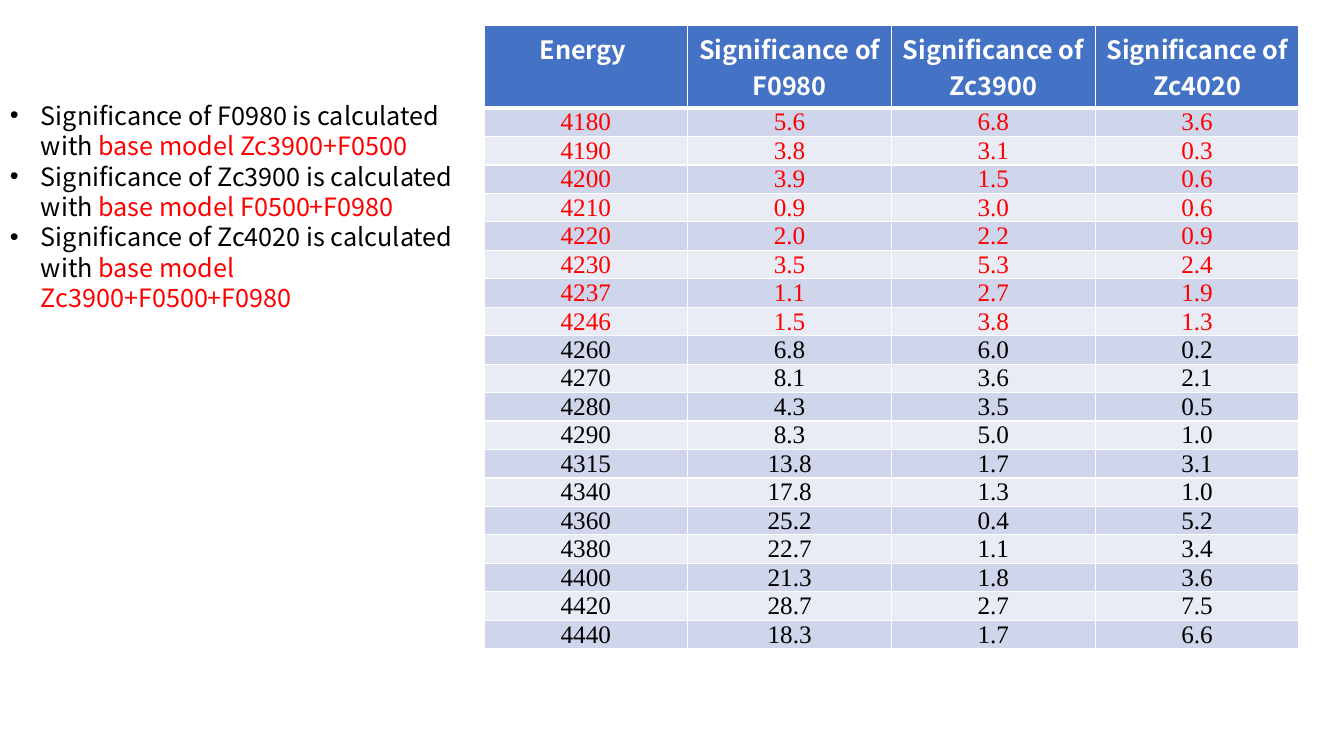
from lxml import etree
from pptx import Presentation
from pptx import util as u
from pptx.dml.color import RGBColor
from pptx.enum import text
from pptx.oxml import ns

# Content
NOTES = [
    ("Significance of F0980 is calculated with ", "base model Zc3900+F0500"),
    ("Significance of Zc3900 is calculated with ", "base model F0500+F0980"),
    ("Significance of Zc4020 is calculated with ", "base model Zc3900+F0500+F0980"),
]
HEADER = ("Energy ", "Significance of F0980", "Significance of Zc3900", "Significance of Zc4020")
RED_ROWS = [
    ("4180", "5.6", "6.8", "3.6"),
    ("4190", "3.8", "3.1", "0.3"),
    ("4200", "3.9", "1.5", "0.6"),
    ("4210", "0.9", "3.0", "0.6"),
    ("4220", "2.0", "2.2", "0.9"),
    ("4230", "3.5", "5.3", "2.4"),
    ("4237", "1.1", "2.7", "1.9"),
    ("4246", "1.5", "3.8", "1.3"),
]
BLACK_ROWS = [
    ("4260", "6.8", "6.0", "0.2"),
    ("4270", "8.1", "3.6", "2.1"),
    ("4280", "4.3", "3.5", "0.5"),
    ("4290", "8.3", "5.0", "1.0"),
    ("4315", "13.8", "1.7", "3.1"),
    ("4340", "17.8", "1.3", "1.0"),
    ("4360", "25.2", "0.4", "5.2"),
    ("4380", "22.7", "1.1", "3.4"),
    ("4400", "21.3", "1.8", "3.6"),
    ("4420", "28.7", "2.7", "7.5"),
    ("4440", "18.3", "1.7", "6.6"),
]

# Look
SANS, SERIF = "Noto Sans CJK SC", "Times New Roman"
BLACK = RGBColor(0x00, 0x00, 0x00)
WHITE = RGBColor(0xFF, 0xFF, 0xFF)
RED = RGBColor(0xFF, 0x00, 0x00)
HEADER_BLUE = RGBColor(0x44, 0x72, 0xC4)
BANDS = (RGBColor(0xCF, 0xD5, 0xEA), RGBColor(0xE9, 0xEB, 0xF5))
NOTES_LINE = u.Pt(21.7)
THIN, THICK = u.Pt(1), u.Pt(3)

# Layout in px
SLIDE_W, SLIDE_H = 1344, 756
TABLE_LEFT, TABLE_TOP, TABLE_W = 484, 25, 815
HEADER_H, BODY_H = 82, 541
NOTES_BOX = (0, 95, 480, 224)
NOTES_INDENT = 31


def px(length):
    return u.Emu(round(length * 914400 / 100.8))


def set_format(target, values):
    for name, value in values.items():
        setattr(target, name, value)


def add_span(para, words, color, face, bold=False):
    span = para.add_run()
    span.text = words
    set_format(span.font, {"size": u.Pt(18), "name": face, "bold": bold})
    span.font.color.rgb = color


def add_border(cell, side, width):
    line = etree.SubElement(cell._tc.get_or_add_tcPr(), ns.qn(f"a:ln{side}"), w=str(int(width)))
    fill = etree.SubElement(line, ns.qn("a:solidFill"))
    etree.SubElement(fill, ns.qn("a:srgbClr"), val=str(WHITE))


def add_bullet(para):
    props = para._p.get_or_add_pPr()
    props.set("marL", str(px(NOTES_INDENT)))
    props.set("indent", str(-px(NOTES_INDENT)))
    etree.SubElement(props, ns.qn("a:buFont"), typeface="Arial")
    etree.SubElement(props, ns.qn("a:buChar"), char="•")


def add_table(page):
    rows = [HEADER] + RED_ROWS + BLACK_ROWS
    row_h = BODY_H / (len(rows) - 1)
    frame = page.shapes.add_table(len(rows), len(HEADER), px(TABLE_LEFT), px(TABLE_TOP),
                                  px(TABLE_W), px(HEADER_H + BODY_H))
    table = frame.table
    for column in table.columns:
        column.width = px(TABLE_W / len(HEADER))
    for r, values in enumerate(rows):
        table.rows[r].height = px(row_h if r else HEADER_H)
        for c, value in enumerate(values):
            cell = table.cell(r, c)
            for side in "LRTB":
                under_header = (r, side) in ((0, "B"), (1, "T"))
                add_border(cell, side, THICK if under_header else THIN)
            cell.fill.solid()
            para = cell.text_frame.paragraphs[0]
            para.alignment = text.PP_ALIGN.CENTER
            if r == 0:
                cell.fill.fore_color.rgb = HEADER_BLUE
                add_span(para, value, WHITE, SANS, bold=True)
                continue
            cell.fill.fore_color.rgb = BANDS[(r - 1) % 2]
            set_format(cell, {"vertical_anchor": text.MSO_ANCHOR.MIDDLE, "margin_left": px(1),
                              "margin_right": px(1), "margin_top": 0, "margin_bottom": 0})
            add_span(para, value, RED if r <= len(RED_ROWS) else BLACK, SERIF)


def add_notes(page):
    box = page.shapes.add_textbox(*map(px, NOTES_BOX)).text_frame
    set_format(box, {"word_wrap": True, "auto_size": text.MSO_AUTO_SIZE.SHAPE_TO_FIT_TEXT})
    for i, (lead, model) in enumerate(NOTES):
        para = box.add_paragraph() if i else box.paragraphs[0]
        add_bullet(para)
        para.line_spacing = NOTES_LINE
        add_span(para, lead, BLACK, SANS)
        add_span(para, model, RED, SANS)


def main():
    deck = Presentation()
    set_format(deck, {"slide_width": px(SLIDE_W), "slide_height": px(SLIDE_H)})
    page = deck.slides.add_slide(deck.slide_layouts[6])
    add_table(page)
    add_notes(page)
    deck.save("out.pptx")


if __name__ == "__main__":
    main()
